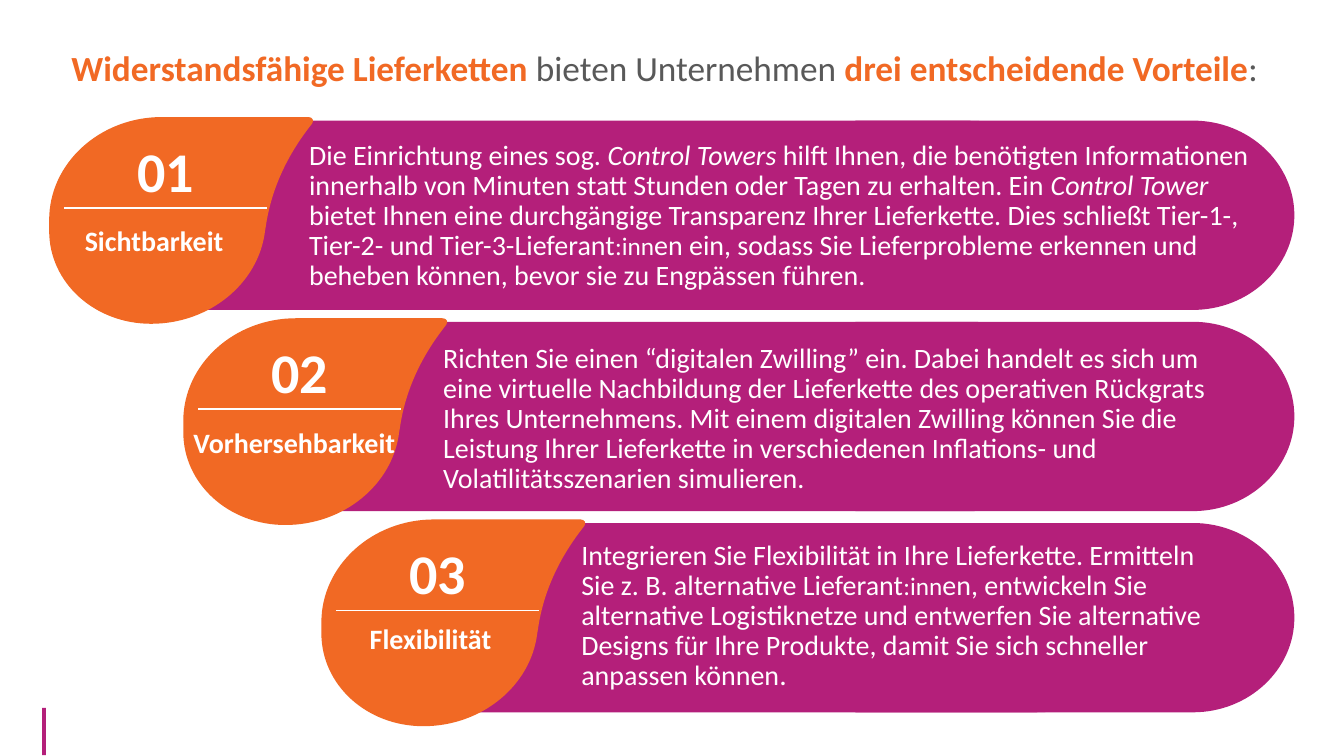
import lxml.etree
import pptx
import pptx.dml.color
import pptx.enum.shapes
import pptx.enum.text
import pptx.oxml.ns
import pptx.util

Cm = pptx.util.Cm
Pt = pptx.util.Pt
qn = pptx.oxml.ns.qn

ORANGE, MAGENTA, GREY, WHITE = "F16924", "B41F7A", "595959", "FFFFFF"
BAR_HEIGHT = 4.77
BAR_END_LEFT, BAR_END_WIDTH = 21.56, 11.06
FIRST_TOP, ROW_PITCH = 2.95, 5.07

# Each step is an end point, or two control points and an end point, in cm.
DROP_OUTLINE = [
    [(6.53, 0)],
    [(6.63, 0), (6.68, 0.08), (6.63, 0.16)],
    [(6.25, 0.64), (5.64, 1.52), (5.46, 2.75)],
    [(5.46, 2.79), (5.46, 2.82), (5.44, 2.87)],
    [(5.28, 4.19), (4.04, 5.21), (2.57, 5.21)],
    [(1.14, 5.21), (0, 4.17), (0, 2.87)],
    [(0, 2.59)],
    [(0, 1.17), (1.27, 0), (2.84, 0)],
]

# Left edge, bar width, label box (offsets and size), text offset,
# text right edge, label spans, text spans
BENEFITS = [
    (1.24, 26.13, (0.3, 2.41, 4.88, 1.27), 0.48, 31.8,
     [("Sichtbarkeit", {}), (" ", {"size": 24})], [
        ("Die Einrichtung eines sog. ", {}),
        ("Control Towers ", {"italic": True}),
        ("hilft Ihnen, die benötigten Informationen innerhalb von Minuten statt "
         "Stunden oder Tagen zu erhalten. Ein ", {}),
        ("Control Tower ", {"italic": True}),
        ("bietet Ihnen eine durchgängige Transparenz Ihrer Lieferkette. Dies "
         "schließt Tier-1-, Tier-2- und Tier-3-Lieferant", {}),
        (":inn", {"size": 18}),
        ("en ein, sodass Sie Lieferprobleme erkennen und beheben können, bevor "
         "sie zu Engpässen führen.", {}),
    ]),
    (4.62, 22, (-2.18, 2.57, 9.96, 1.12), 0.53, 31.27,
     [("Vorhersehbarkeit", {})], [
        ("Richten Sie einen “digitalen Zwilling” ein. Dabei handelt es sich um "
         "eine virtuelle Nachbildung der Lieferkette des operativen Rückgrats "
         "Ihres Unternehmens. Mit einem digitalen Zwilling können Sie die "
         "Leistung Ihrer Lieferkette in verschiedenen Inflations- und "
         "Volatilitätsszenarien simulieren.", {}),
    ]),
    (8.1, 19.63, (-0.18, 2.44, 6.02, 1.12), 0.43, 31.27,
     [("Flexibilität ", {})], [
        ("Integrieren Sie Flexibilität in Ihre Lieferkette. Ermitteln Sie z. B. "
         "alternative Lieferant", {}),
        (":inn", {"size": 18}),
        ("en, entwickeln Sie alternative Logistiknetze und entwerfen Sie "
         "alternative Designs für Ihre Produkte, damit Sie sich schneller "
         "anpassen können", {}),
        (".", {"size": 21}),
    ]),
]


def color(value):
    return pptx.dml.color.RGBColor.from_string(value)


def paint(shape, fill):
    """Give a shape a plain fill without line or shadow."""
    shape.fill.solid()
    shape.fill.fore_color.rgb = color(fill)
    shape.line.fill.background()
    shape.shadow.inherit = False


def add_text(shapes, left, top, width, height, spans, size=20, fill=WHITE,
             bold=False, centered=False, spacing=None):
    """Add a text box; spans are pairs of text and differing font settings."""
    box = shapes.add_textbox(Cm(left), Cm(top), Cm(width), Cm(height))
    box.text_frame.word_wrap = True
    para = box.text_frame.paragraphs[0]
    if centered:
        para.alignment = pptx.enum.text.PP_ALIGN.CENTER
    if spacing:
        para.line_spacing = spacing
    for text, changes in spans:
        span = para.add_run()
        span.text = text
        span.font.name = "Calibri"
        span.font.size = Pt(changes.get("size", size))
        span.font.bold = changes.get("bold", bold)
        span.font.italic = changes.get("italic", False)
        span.font.color.rgb = color(changes.get("fill", fill))


def add_outline(shapes, left, top, outline, fill):
    """Add a freeform, turning the steps with control points into curves."""
    steps = [[(Cm(left + x), Cm(top + y)) for x, y in step] for step in outline]
    builder = shapes.build_freeform(*steps[0][-1])
    builder.add_line_segments([step[-1] for step in steps[1:]], close=True)
    shape = builder.convert_to_shape()
    lines = list(shape._element.iter(qn("a:lnTo")))
    for line, step in zip(lines, steps[1:]):
        if len(step) == 3:
            line.tag = qn("a:cubicBezTo")
            for position, (x, y) in enumerate(step[:2]):
                point = lxml.etree.Element(qn("a:pt"), x=str(x - shape.left),
                                           y=str(y - shape.top))
                line.insert(position, point)
    paint(shape, fill)


def add_bar(shapes, left, top, width, height):
    """Add a bar whose right end is half an ellipse."""
    radius, middle = 0.231 * width, height / 2
    straight, bend, rise = width - radius, width - 0.45 * radius, 0.45 * middle
    add_outline(shapes, left, top, [
        [(width, middle)],
        [(width, rise), (bend, 0), (straight, 0)],
        [(0, 0)],
        [(0, height)],
        [(straight, height)],
        [(bend, height), (width, height - rise), (width, middle)],
    ], MAGENTA)


def add_rule(shapes, left, top, width):
    rule = shapes.add_connector(pptx.enum.shapes.MSO_CONNECTOR.STRAIGHT,
                                Cm(left), Cm(top), Cm(left + width), Cm(top))
    rule.line.color.rgb = color(WHITE)
    rule.line.width = Pt(1)
    lxml.etree.SubElement(rule._element.spPr, qn("a:effectLst"))


def add_benefit(page, number, left, top, bar_width, label_box, text_offset,
                text_right, label, spans):
    shapes = page.shapes.add_group_shape().shapes
    text_left = left + 6.3
    label_left, label_top, label_width, label_height = label_box
    add_bar(shapes, BAR_END_LEFT, top + 0.09, BAR_END_WIDTH, BAR_HEIGHT)
    add_bar(shapes, left + 2.79, top + 0.09, bar_width, BAR_HEIGHT)
    add_outline(shapes, left, top, DROP_OUTLINE, ORANGE)
    add_text(shapes, text_left, top + text_offset, text_right - text_left, 4,
             spans, spacing=Pt(21.4))
    add_text(shapes, left + label_left, top + label_top, label_width,
             label_height, label, bold=True, centered=True)
    add_text(shapes, left + 0.38, top + 0.36, 5.11, 1.96,
             [(f"{number:02}", {})], size=40, bold=True, centered=True)
    add_rule(shapes, left + 0.38, top + 2.29, 5.11)


def add_heading(page, left, top, width, height):
    strong = {"fill": ORANGE, "bold": True}
    add_text(page.shapes, left, top, width, height, [
        ("Widerstandsfähige Lieferketten ", strong),
        ("bieten Unternehmen ", {}),
        ("drei entscheidende Vorteile", strong),
        (":", {}),
    ], size=25.2, fill=GREY, spacing=0.7)


def add_accent(page, left, top, width, height):
    accent = page.shapes.add_shape(pptx.enum.shapes.MSO_SHAPE.RECTANGLE,
                                   Cm(left), Cm(top), Cm(width), Cm(height))
    paint(accent, MAGENTA)


def main():
    deck = pptx.Presentation()
    deck.slide_width, deck.slide_height = Cm(33.87), Cm(19.05)
    page = deck.slides.add_slide(deck.slide_layouts[6])
    add_accent(page, 1.06, 17.84, 0.1, 1.19)
    add_heading(page, 1.55, 1.32, 30.76, 1.63)
    for index, (left, *content) in enumerate(BENEFITS):
        add_benefit(page, index + 1, left, FIRST_TOP + index * ROW_PITCH, *content)
    deck.save("out.pptx")


if __name__ == "__main__":
    main()
